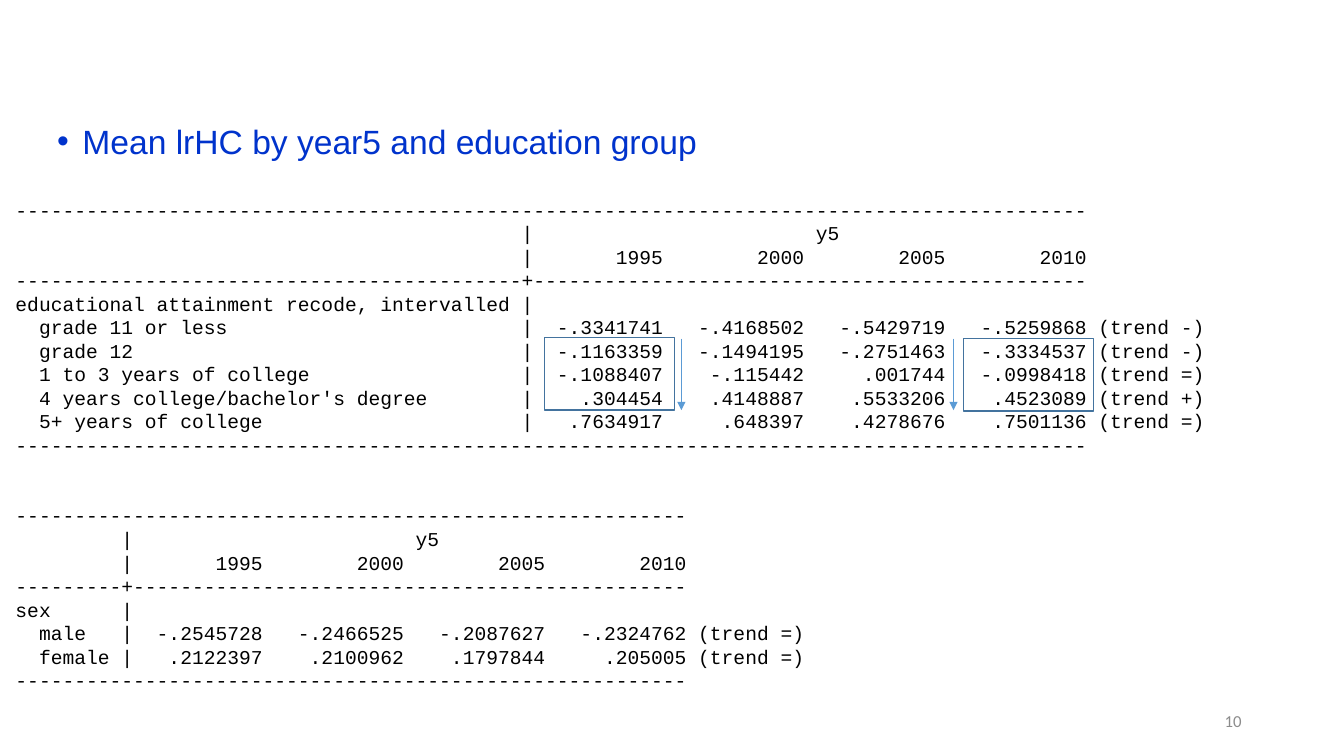
from dataclasses import dataclass

from lxml import etree
from pptx import Presentation
from pptx.dml.color import RGBColor
from pptx.enum import shapes, text
from pptx.oxml import ns
from pptx.util import Pt


@dataclass(frozen=True)
class Theme:
    heading: RGBColor = RGBColor(0x00, 0x33, 0xCC)
    listing: RGBColor = RGBColor(0x00, 0x00, 0x00)
    number: RGBColor = RGBColor(0x8C, 0x8C, 0x8C)
    frame: RGBColor = RGBColor(0x43, 0x73, 0x9E)
    arrow: RGBColor = RGBColor(0x5B, 0x9B, 0xD5)
    heading_size: int = 24
    listing_size: int = 14
    number_size: int = 12
    line_pitch: float = 16.8


THEME = Theme()
YEARS = ("1995", "2000", "2005", "2010")
COLUMN_WIDTH = 12
EDUCATION = (
    ("grade 11 or less", ("-.3341741", "-.4168502", "-.5429719", "-.5259868"), "-"),
    ("grade 12", ("-.1163359", "-.1494195", "-.2751463", "-.3334537"), "-"),
    ("1 to 3 years of college", ("-.1088407", "-.115442", ".001744", "-.0998418"), "="),
    ("4 years college/bachelor's degree", (".304454", ".4148887", ".5533206", ".4523089"), "+"),
    ("5+ years of college", (".7634917", ".648397", ".4278676", ".7501136"), "="),
)
SEX = (
    ("male", ("-.2545728", "-.2466525", "-.2087627", "-.2324762"), "="),
    ("female", (".2122397", ".2100962", ".1797844", ".205005"), "="),
)


def apply_format(target, values):
    for name, value in values.items():
        setattr(target, name, value)


def table_lines(title, rows, stub_width):
    def cells(values):
        return "".join(f"{value:>{COLUMN_WIDTH}}" for value in values)[1:]

    body_width = len(cells(YEARS))
    rule = "-" * (stub_width + 1 + body_width)
    lines = [
        rule,
        f"{'':{stub_width}}|{'y5':>26}",
        f"{'':{stub_width}}|{cells(YEARS)}",
        "-" * stub_width + "+" + "-" * body_width,
        f"{title:{stub_width}}|",
    ]
    for label, values, trend in rows:
        stub = f"  {label}"
        lines.append(f"{stub:{stub_width}}|{cells(values)} (trend {trend})")
    return lines + [rule]


def add_text(slide, box, lines, font, frame_format=None, paragraph_format=None):
    frame = slide.shapes.add_textbox(*map(Pt, box)).text_frame
    apply_format(frame, {"word_wrap": True, **(frame_format or {})})
    for index, line in enumerate(lines):
        paragraph = frame.add_paragraph() if index else frame.paragraphs[0]
        apply_format(paragraph, paragraph_format or {})
        run = paragraph.add_run()
        run.text = line
        color = font["color"]
        apply_format(run.font, {"name": font["name"], "size": Pt(font["size"])})
        run.font.color.rgb = color
    return frame


def add_bullet(paragraph):
    properties = paragraph._p.get_or_add_pPr()
    apply_indent = {"marL": str(Pt(18)), "indent": str(-Pt(18))}
    for name, value in apply_indent.items():
        properties.set(name, value)
    typeface = etree.SubElement(properties, ns.qn("a:buFont"))
    typeface.set("typeface", "Arial")
    etree.SubElement(properties, ns.qn("a:buChar")).set("char", "•")


def add_frame(slide, left, top):
    shape = slide.shapes.add_shape(
        shapes.MSO_SHAPE.RECTANGLE, Pt(left), Pt(top), Pt(92.9), Pt(51.8)
    )
    shape.shadow.inherit = False
    shape.fill.background()
    shape.line.color.rgb = THEME.frame
    shape.line.width = Pt(1)


def add_arrow(slide, x, top, bottom):
    connector = slide.shapes.add_connector(
        shapes.MSO_CONNECTOR.STRAIGHT, Pt(x), Pt(top), Pt(x), Pt(bottom)
    )
    connector.line.color.rgb = THEME.arrow
    connector.line.width = Pt(0.5)
    line = connector.line._get_or_add_ln()
    etree.SubElement(line, ns.qn("a:tailEnd")).set("type", "triangle")
    etree.SubElement(connector._element.spPr, ns.qn("a:effectLst"))


def main():
    presentation = Presentation()
    apply_format(presentation, {"slide_width": Pt(960), "slide_height": Pt(540)})
    slide = presentation.slides.add_slide(presentation.slide_layouts[6])

    heading = add_text(
        slide, (33.8, 82.5, 880, 36), ["Mean lrHC by year5 and education group"],
        {"name": "Arial", "size": THEME.heading_size, "color": THEME.heading},
    )
    add_bullet(heading.paragraphs[0])

    add_text(
        slide, (678, 500.4, 216, 28.8), ["10"],
        {"name": "Calibri", "size": THEME.number_size, "color": THEME.number},
        {"vertical_anchor": text.MSO_ANCHOR.MIDDLE},
        {"alignment": text.PP_ALIGN.RIGHT},
    )

    education = table_lines("educational attainment recode, intervalled", EDUCATION, 43)
    sex = table_lines("sex", SEX, 9)
    listing = add_text(
        slide, (4, 137.5, 950, 362), education + sex,
        {"name": "Courier New", "size": THEME.listing_size, "color": THEME.listing},
        paragraph_format={"line_spacing": Pt(THEME.line_pitch)},
    )
    listing.paragraphs[len(education)].space_before = Pt(2 * THEME.line_pitch)

    for left, top in ((388.8, 241.2), (688.3, 241.9)):
        add_frame(slide, left, top)
    for x in (486.7, 681.1):
        add_arrow(slide, x, 241.9, 293)

    presentation.save("out.pptx")


if __name__ == "__main__":
    main()
